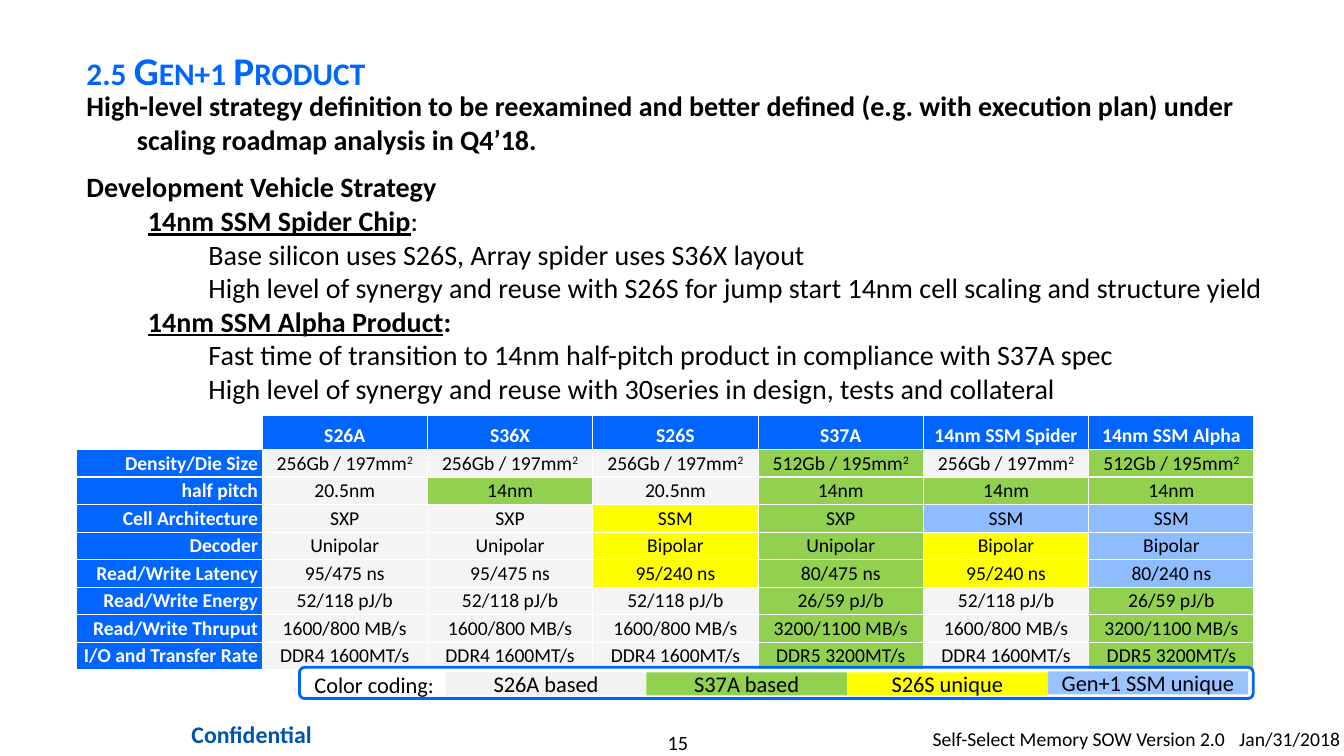
import pptx
import pptx.dml.color
import pptx.enum.shapes
import pptx.enum.text
import pptx.oxml.ns
import pptx.util
from lxml import etree

ALIGN = pptx.enum.text.PP_ALIGN
ANCHOR = pptx.enum.text.MSO_ANCHOR
SHAPE = pptx.enum.shapes.MSO_SHAPE

EMU_PER_PX = 9144  # 100 px to the inch
BLUE, BLACK, WHITE = "0066FF", "000000", "FFFFFF"
GREY, GREEN, YELLOW, SKY = "F4F4F4", "92D050", "FFFF00", "8FBCFF"


def px(length):
    return pptx.util.Emu(length * EMU_PER_PX)


def colour(value):
    return pptx.dml.color.RGBColor.from_string(value)


def add_xml(parent, tag, **attributes):
    child = etree.SubElement(parent, pptx.oxml.ns.qn(tag))
    for name, value in attributes.items():
        child.set(name, str(value))
    return child


def add_span(para, text, size=14, color=BLACK, bold=False, underline=False,
             small_caps=False, raised=False):
    span = para.add_run()
    span.text = text
    font = span.font
    font.name, font.size, font.bold = "Calibri", pptx.util.Pt(size), bold
    font.color.rgb = colour(color)
    if underline:
        font.underline = True
    properties = span._r.get_or_add_rPr()
    if small_caps:
        properties.set("cap", "small")
    if raised:
        properties.set("baseline", "30000")


class SlideBuilder:
    def __init__(self, page):
        self.page = page

    def frame(self, owner, margins, anchor, wrap=True):
        frame = owner.text_frame
        frame.word_wrap = wrap
        frame.vertical_anchor = anchor
        frame.margin_left = frame.margin_right = px(margins[0])
        frame.margin_top = frame.margin_bottom = px(margins[1])
        return frame

    def text(self, area, text="", margins=(10, 5), anchor=ANCHOR.TOP,
             align=ALIGN.LEFT, wrap=True, **style):
        box = self.page.shapes.add_textbox(*map(px, area))
        frame = self.frame(box, margins, anchor, wrap)
        para = frame.paragraphs[0]
        para.alignment = align
        if text:
            add_span(para, text, **style)
        return frame

    def shape(self, kind, area, fill=None, line=None, text=""):
        shape = self.page.shapes.add_shape(kind, *map(px, area))
        shape.shadow.inherit = False
        if fill:
            shape.fill.solid()
            shape.fill.fore_color.rgb = colour(fill)
        else:
            shape.fill.background()
        if line:
            shape.line.color.rgb = colour(line)
            shape.line.width = pptx.util.Pt(2)
        else:
            shape.line.fill.background()
        if text:
            frame = self.frame(shape, (10, 5), ANCHOR.MIDDLE)
            frame.paragraphs[0].alignment = ALIGN.CENTER
            add_span(frame.paragraphs[0], text, size=16)

    def cell(self, cell, text, fill, align, **style):
        cell.vertical_anchor = ANCHOR.BOTTOM
        cell.margin_left = cell.margin_right = px(4)
        cell.margin_top = cell.margin_bottom = px(2)
        para = cell.text_frame.paragraphs[0]
        para.alignment = align
        base, _, power = text.partition("^")
        add_span(para, base, **style)
        if power:
            add_span(para, power, raised=True, **style)
        properties = cell._tc.get_or_add_tcPr()
        for side in ("a:lnL", "a:lnR", "a:lnT", "a:lnB"):
            border = add_xml(properties, side, w=pptx.util.Pt(1))
            add_xml(add_xml(border, "a:solidFill"), "a:srgbClr", val=WHITE)
        if fill:
            cell.fill.solid()
            cell.fill.fore_color.rgb = colour(fill)
        else:
            cell.fill.background()

    def table(self, area, widths, row_height, rows, fills):
        table = self.page.shapes.add_table(
            len(rows), len(widths), *map(px, area)).table
        table.first_row = table.horz_banding = False
        for column, width in zip(table.columns, widths):
            column.width = px(width)
        for row_index, row in enumerate(rows):
            table.rows[row_index].height = px(row_height)
            for column_index, text in enumerate(row):
                cell = table.cell(row_index, column_index)
                if row_index and column_index:
                    fill = fills[row_index - 1][column_index - 1]
                    self.cell(cell, text, FILL_CODES[fill], ALIGN.CENTER)
                else:
                    align = ALIGN.CENTER if column_index else ALIGN.RIGHT
                    self.cell(cell, text, BLUE if text else None, align,
                              color=WHITE, bold=True)


# Body lines: left indent, hanging indent, space before, spans
BOLD = {"bold": True}
HEADING = {"bold": True, "underline": True}
BODY = [
    (50, -50, 0, [("High-level strategy definition to be reexamined and better defined "
                   "(e.g. with execution plan) under scaling roadmap analysis in Q4’18.", BOLD)]),
    (50, -50, 10, [("Development Vehicle Strategy", BOLD)]),
    (61, 0, 0, [("14nm SSM Spider Chip", HEADING), (":", {})]),
    (121, 0, 0, [("Base silicon uses S26S, Array spider uses S36X layout", {})]),
    (121, 0, 0, [("High level of synergy and reuse with S26S for jump start 14nm "
                  "cell scaling and structure yield", {})]),
    (61, 0, 0, [("14nm SSM Alpha Product", HEADING), (":", BOLD)]),
    (121, 0, 0, [("Fast time of transition to 14nm half-pitch product in compliance "
                  "with S37A spec", {})]),
    (121, 0, 0, [("High level of synergy and reuse with 30series in design, tests "
                  "and collateral", {})]),
]

FILL_CODES = {"g": GREY, "n": GREEN, "y": YELLOW, "s": SKY}
PRODUCT_FILLS = ["gggngn", "gngnnn", "ggynss", "ggynys",
                 "ggynys", "gggngn", "gggngn", "gggngn"]
SMALL_DIE, LARGE_DIE = "256Gb / 197mm^2", "512Gb / 195mm^2"
PRODUCTS = [
    ["", "S26A", "S36X", "S26S", "S37A", "14nm SSM Spider", "14nm SSM Alpha"],
    ["Density/Die Size", *[SMALL_DIE] * 3, LARGE_DIE, SMALL_DIE, LARGE_DIE],
    ["half pitch", "20.5nm", "14nm", "20.5nm", *["14nm"] * 3],
    ["Cell Architecture", "SXP", "SXP", "SSM", "SXP", "SSM", "SSM"],
    ["Decoder", "Unipolar", "Unipolar", "Bipolar", "Unipolar", "Bipolar", "Bipolar"],
    ["Read/Write Latency", "95/475 ns", "95/475 ns", "95/240 ns",
     "80/475 ns", "95/240 ns", "80/240 ns"],
    ["Read/Write Energy", *["52/118 pJ/b"] * 3, "26/59 pJ/b", "52/118 pJ/b", "26/59 pJ/b"],
    ["Read/Write Thruput", *["1600/800 MB/s"] * 3,
     "3200/1100 MB/s", "1600/800 MB/s", "3200/1100 MB/s"],
    ["I/O and Transfer Rate", *["DDR4 1600MT/s"] * 3,
     "DDR5 3200MT/s", "DDR4 1600MT/s", "DDR5 3200MT/s"],
]
LEGEND = [("S26A based", "F2F2F2", 667), ("S37A based", GREEN, 667),
          ("S26S unique", YELLOW, 667), ("Gen+1 SSM unique", "99C2FF", 666)]


def main():
    deck = pptx.Presentation()
    deck.slide_width, deck.slide_height = px(1333), px(750)
    builder = SlideBuilder(deck.slides.add_slide(deck.slide_layouts[6]))

    # Footer
    builder.text((556, 724, 233, 24), "15", margins=(0, 0), align=ALIGN.CENTER, size=14.5)
    builder.text((155, 708, 189, 41), "Confidential", margins=(12, 6),
                 align=ALIGN.CENTER, size=17, color="0054B0", bold=True)
    footer = builder.text((925, 716, 408, 34), margins=(0, 5)).paragraphs[0]
    tabs = add_xml(footer._p.get_or_add_pPr(), "a:tabLst")
    add_xml(tabs, "a:tab", pos=px(304), algn="l")
    add_span(footer, "Self-Select Memory SOW Version 2.0\tJan/31/2018")

    # Title and body
    title = builder.text((76, 21, 1106, 92), "2.5 Gen+1 Product", anchor=ANCHOR.MIDDLE,
                         size=28, color=BLUE, bold=True, small_caps=True)
    title.paragraphs[0].line_spacing = 1.1
    body = builder.text((76, 83, 1193, 329))
    for index, (left, hanging, before, spans) in enumerate(BODY):
        para = body.add_paragraph() if index else body.paragraphs[0]
        properties = para._p.get_or_add_pPr()
        properties.set("marL", str(px(left)))
        properties.set("indent", str(px(hanging)))
        if before:
            para.space_before = pptx.util.Pt(before)
        for text, style in spans:
            add_span(para, text, size=20, **style)

    # Product comparison
    builder.table((76, 412, 1168, 243), [184] + [164] * 6, 27, PRODUCTS, PRODUCT_FILLS)

    # Colour legend
    for index, (text, fill, top) in enumerate(LEGEND):
        builder.shape(SHAPE.RECTANGLE, (442 + 199 * index, top, 199, 23), fill, text=text)
    builder.text((302, 661, 140, 37), "Color coding:", wrap=False, size=16)
    builder.shape(SHAPE.ROUNDED_RECTANGLE, (297, 662, 946, 31), line=BLUE)

    deck.save("out.pptx")


if __name__ == "__main__":
    main()
